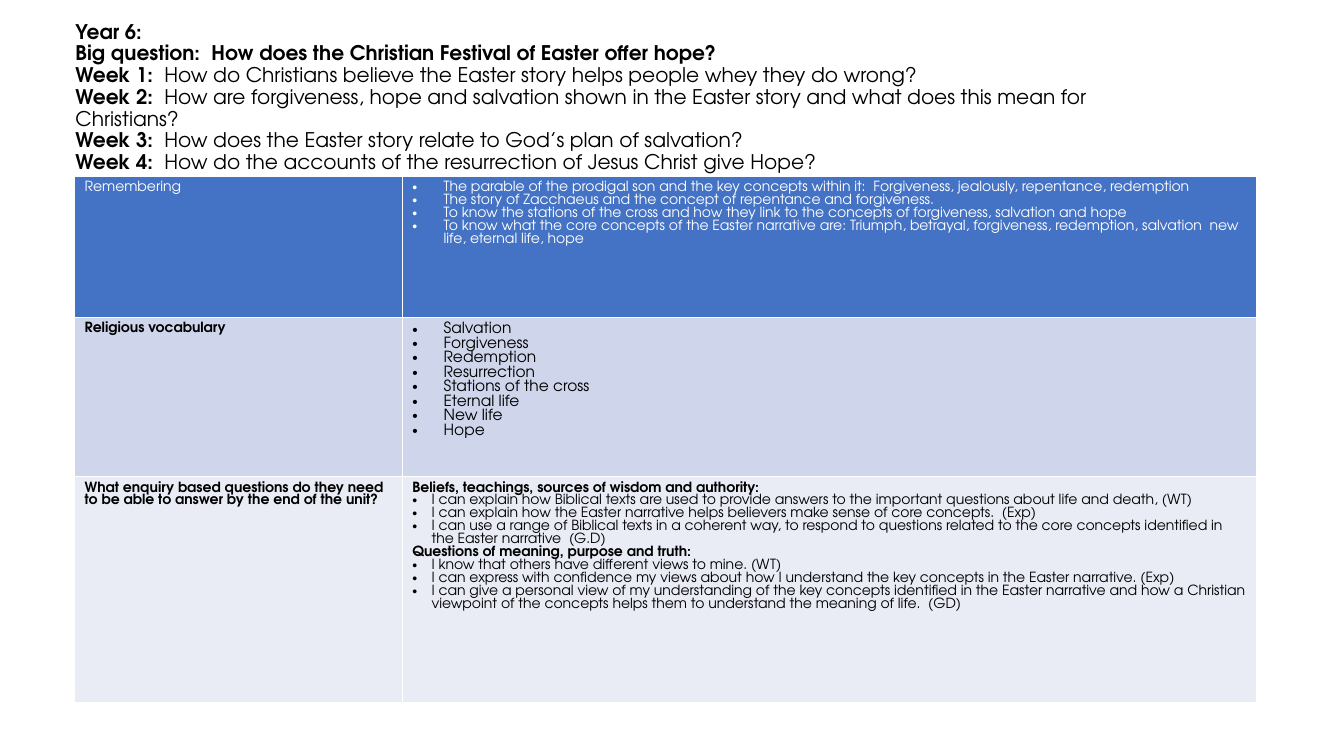
from pptx import Presentation
from pptx.dml.color import RGBColor
from pptx.enum.text import MSO_ANCHOR
from pptx.oxml.xmlchemy import OxmlElement
from pptx.util import Inches, Pt

FONT = "TeX Gyre Adventor"
BLACK = RGBColor(0x00, 0x00, 0x00)
WHITE = RGBColor(0xFF, 0xFF, 0xFF)
BLUE = RGBColor(0x44, 0x72, 0xC4)
MID_BLUE = RGBColor(0xCF, 0xD5, 0xEA)
PALE_BLUE = RGBColor(0xE9, 0xEB, 0xF5)

HEADING = [
    ("Year 6:", ""),
    ("Big question:  How does the Christian Festival of Easter offer hope?", ""),
    ("Week 1:  ", "How do Christians believe the Easter story helps people whey they do wrong?"),
    ("Week 2:  ", "How are forgiveness, hope and salvation shown in the Easter story "
                  "and what does this mean for Christians?"),
    ("Week 3:  ", "How does the Easter story relate to God’s plan of salvation?"),
    ("Week 4:  ", "How do the accounts of the resurrection of Jesus Christ give Hope?"),
]

REMEMBERING = [
    "The parable of the prodigal son and the key concepts within it:  "
    "Forgiveness, jealously, repentance, redemption",
    "The story of Zacchaeus and the concept of repentance and forgiveness.",
    "To know the stations of the cross and how they link to the concepts of "
    "forgiveness, salvation and hope",
    "To know what the core concepts of the Easter narrative are: Triumph, betrayal, "
    "forgiveness, redemption, salvation  new life, eternal life, hope",
]
VOCABULARY = ["Salvation", "Forgiveness", "Redemption", "Resurrection",
              "Stations of the cross", "Eternal life", "New life", "Hope"]
BELIEFS = [
    "I can explain how Biblical texts are used to provide answers to the important "
    "questions about life and death, (WT)",
    "I can explain how the Easter narrative helps believers make sense of core concepts.  (Exp)",
    "I can use a range of Biblical texts in a coherent way, to respond to questions "
    "related to the core concepts identified in the Easter narrative  (G.D)",
]
MEANING = [
    "I know that others have different views to mine. (WT)",
    "I can express with confidence my views about how I understand the key concepts "
    "in the Easter narrative. (Exp)",
    "I can give a personal view of my understanding of the key concepts identified in the "
    "Easter narrative and how a Christian viewpoint of the concepts helps them to "
    "understand the meaning of life.  (GD)",
]

# Each row: height, fill, text colour, label, label bold, bullet size, bullet indent,
# and groups of (subheading, bullets)
ROWS = [
    (1.4, BLUE, WHITE, "Remembering", False, 10, 0.31, [("", REMEMBERING)]),
    (1.58, MID_BLUE, BLACK, "Religious vocabulary", True, 11, 0.31, [("", VOCABULARY)]),
    (2.24, PALE_BLUE, BLACK,
     "What enquiry based questions do they need to be able to answer by the end of the unit?",
     True, 10, 0.19,
     [("Beliefs, teachings, sources of wisdom and authority:", BELIEFS),
      ("Questions of meaning, purpose and truth:", MEANING)]),
]


def set_font(font, size, color, bold=None):
    font.name, font.size, font.bold = FONT, Pt(size), bold
    font.color.rgb = color


def next_para(frame):
    """Give the first paragraph while it is empty, then new ones."""
    first = frame.paragraphs[0]
    return frame.add_paragraph() if first.runs else first


def add_line(frame, text, size, color, bold=False, indent=0):
    para = next_para(frame)
    span = para.add_run()
    span.text = text
    set_font(span.font, size, color, bold)
    if indent:
        props = para._p.get_or_add_pPr()
        props.set("marL", str(Inches(indent)))
        props.set("indent", str(-Inches(indent)))
        for tag, key, value in (("a:buFont", "typeface", "Arial"), ("a:buChar", "char", "•")):
            mark = OxmlElement(tag)
            mark.set(key, value)
            props.append(mark)


def add_heading(page, left, top, width, height):
    box = page.shapes.add_textbox(Inches(left), Inches(top), Inches(width), Inches(height))
    frame = box.text_frame
    frame.word_wrap = True
    frame.vertical_anchor = MSO_ANCHOR.MIDDLE
    frame.margin_top = Inches(0.27)
    for label, question in HEADING:
        para = next_para(frame)
        para.line_spacing = 0.9
        set_font(para.font, 14.4, BLACK)
        for text, bold in ((label, True), (question, False)):
            if text:
                span = para.add_run()
                span.text = text
                set_font(span.font, 14.4, BLACK, bold)


def add_unit_table(page, left, top, widths):
    height = sum(row[0] for row in ROWS)
    table = page.shapes.add_table(len(ROWS), len(widths), Inches(left), Inches(top),
                                  Inches(sum(widths)), Inches(height)).table
    for column, width in zip(table.columns, widths):
        column.width = Inches(width)
    for index, (tall, fill, color, label, bold, size, indent, groups) in enumerate(ROWS):
        table.rows[index].height = Inches(tall)
        name_cell, detail_cell = table.cell(index, 0), table.cell(index, 1)
        for cell in (name_cell, detail_cell):
            cell.fill.solid()
            cell.fill.fore_color.rgb = fill
        add_line(name_cell.text_frame, label, 10, color, bold)
        for subheading, bullets in groups:
            if subheading:
                add_line(detail_cell.text_frame, subheading, size, color, True)
            for text in bullets:
                add_line(detail_cell.text_frame, text, size, color, indent=indent)


def main():
    deck = Presentation()
    deck.slide_width, deck.slide_height = Inches(13.33), Inches(7.5)
    page = deck.slides.add_slide(deck.slide_layouts[6])
    add_heading(page, 0.65, 0.3, 11.25, 1.12)
    add_unit_table(page, 0.74, 1.75, (3.25, 8.47))
    deck.save("out.pptx")


if __name__ == "__main__":
    main()
